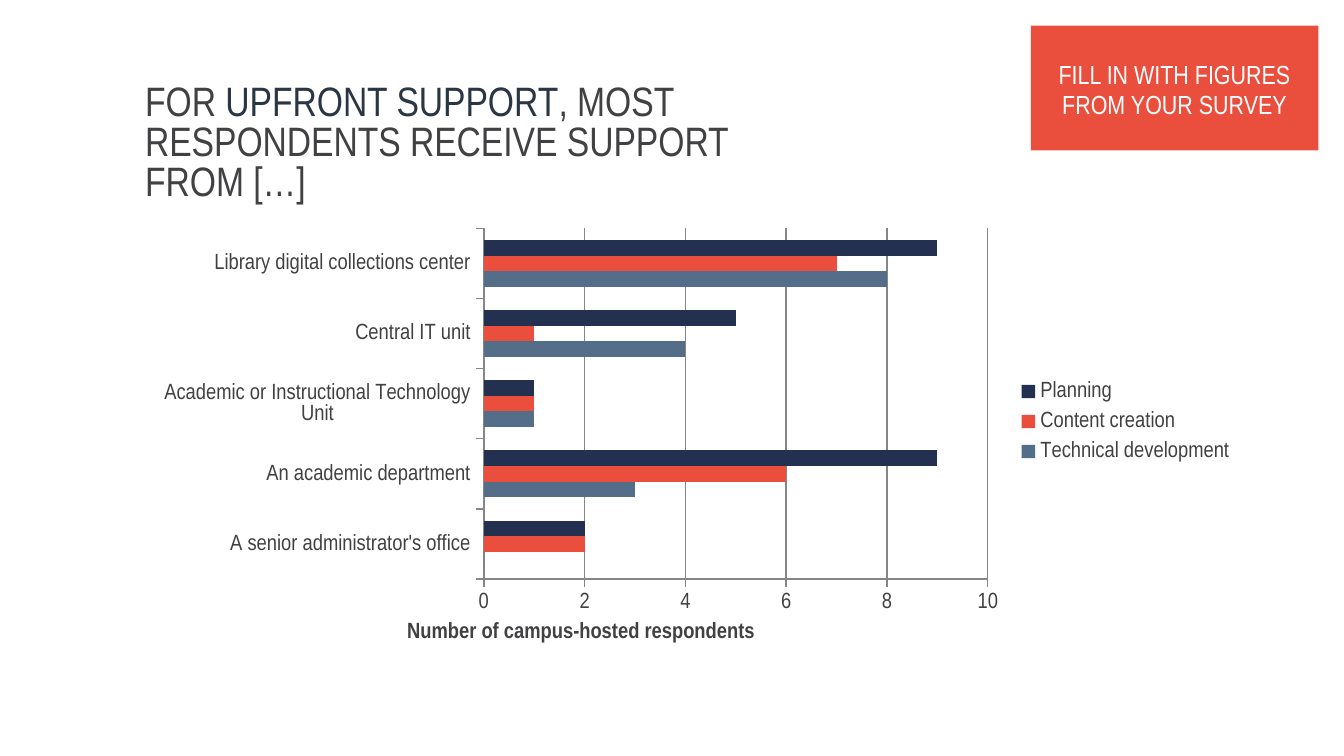
from lxml import etree
from pptx import Presentation
from pptx.chart.data import CategoryChartData
from pptx.dml.color import RGBColor
from pptx.enum.chart import XL_CHART_TYPE as ChartType, XL_LEGEND_POSITION as LegendPosition
from pptx.enum.chart import XL_TICK_MARK as TickMark
from pptx.enum.shapes import MSO_SHAPE as Shape
from pptx.enum.text import MSO_ANCHOR as Anchor, PP_ALIGN as Align
from pptx.oxml.ns import qn
from pptx.util import Inches, Pt

INK = RGBColor(0x41, 0x40, 0x42)
SLATE = RGBColor(0x2A, 0x36, 0x44)
STEEL = RGBColor(0x54, 0x6D, 0x89)
CORAL = RGBColor(0xE9, 0x4F, 0x3C)
NAVY = RGBColor(0x23, 0x30, 0x50)
GRAY = RGBColor(0x86, 0x86, 0x86)
WHITE = RGBColor(0xFF, 0xFF, 0xFF)
FONT = "Arial Narrow"

HEADLINE = [
    ("FOR ", INK),
    ("UPFRONT SUPPORT", SLATE),
    (", MOST RESPONDENTS RECEIVE SUPPORT FROM […]", INK),
]
REMINDER = "FILL IN WITH FIGURES FROM YOUR SURVEY"
AXIS_TITLE = "Number of campus-hosted respondents"
SUPPORT_UNITS = [
    "A senior administrator's office",
    "An academic department",
    "Academic or Instructional Technology Unit",
    "Central IT unit",
    "Library digital collections center",
]
SUPPORT_TYPES = [
    ("Technical development", (0, 3, 1, 4, 8), STEEL),
    ("Content creation", (2, 6, 1, 1, 7), CORAL),
    ("Planning", (2, 9, 1, 5, 9), NAVY),
]
CHART_WIDTH, CHART_HEIGHT = 8.5, 3.25


def style_font(font, size, color=INK, bold=False):
    font.name = FONT
    font.size = Pt(size)
    font.bold = bold
    font.color.rgb = color


def add_text(paragraph, text, size=12, color=INK, bold=False, align=None, spacing=None):
    run = paragraph.add_run()
    run.text = text
    style_font(run.font, size, color, bold)
    paragraph.alignment = align
    paragraph.line_spacing = spacing


def place(parent, index, left, top, width=None, height=None, target=None):
    for old in parent.findall(qn("c:layout")):
        parent.remove(old)
    layout = etree.Element(qn("c:layout"))
    manual = etree.SubElement(layout, qn("c:manualLayout"))
    settings = {
        "layoutTarget": target,
        "xMode": "edge",
        "yMode": "edge",
        "x": left / CHART_WIDTH,
        "y": top / CHART_HEIGHT,
        "w": width and width / CHART_WIDTH,
        "h": height and height / CHART_HEIGHT,
    }
    for tag, value in settings.items():
        if value is not None:
            etree.SubElement(manual, qn(f"c:{tag}")).set("val", str(value))
    parent.insert(index, layout)


def add_headline(slide):
    box = slide.shapes.add_textbox(Inches(0.86), Inches(0.63), Inches(4.93), Inches(0.56))
    frame = box.text_frame
    frame.word_wrap = True
    frame.margin_left = Inches(0.22)
    frame.margin_top = frame.margin_right = frame.margin_bottom = 0
    for text, color in HEADLINE:
        add_text(frame.paragraphs[0], text, size=22, color=color, spacing=0.81)


def add_support_chart(slide):
    data = CategoryChartData()
    data.categories = SUPPORT_UNITS
    for name, values, _ in SUPPORT_TYPES:
        data.add_series(name, values)
    chart = slide.shapes.add_chart(
        ChartType.BAR_CLUSTERED,
        Inches(1.1), Inches(1.58), Inches(CHART_WIDTH), Inches(CHART_HEIGHT),
        data,
    ).chart
    chart.has_title = False
    style_font(chart.font, 12)

    bars = chart.plots[0]
    bars.gap_width = 150
    bars.vary_by_categories = False
    for series, (_, _, color) in zip(bars.series, SUPPORT_TYPES):
        series.format.fill.solid()
        series.format.fill.fore_color.rgb = color

    units, counts = chart.category_axis, chart.value_axis
    for axis in (units, counts):
        axis.major_tick_mark = TickMark.OUTSIDE
        axis.minor_tick_mark = TickMark.NONE
        axis.format.line.color.rgb = GRAY
        style_font(axis.tick_labels.font, 12)
    units.has_major_gridlines = False
    counts.minimum_scale = 0
    counts.maximum_scale = 10
    counts.major_unit = 2
    counts.has_major_gridlines = True
    counts.major_gridlines.format.line.color.rgb = GRAY
    title_frame = counts.axis_title.text_frame
    add_text(title_frame.paragraphs[0], AXIS_TITLE, bold=True)

    chart.has_legend = True
    legend = chart.legend
    legend.position = LegendPosition.RIGHT
    legend.include_in_layout = False
    style_font(legend.font, 12)

    plot_area = bars._element.getparent()
    place(plot_area, 0, 2.5, 0.12, 3.75, 2.64, target="inner")
    place(counts.axis_title._element, 1, 1.9, 3.03)
    place(legend._element, 1, 6.34, 1.2, 1.87, 0.75)


def add_reminder(slide):
    box = slide.shapes.add_shape(
        Shape.RECTANGLE, Inches(7.67), Inches(0.19), Inches(2.14), Inches(0.93)
    )
    box.shadow.inherit = False
    box.fill.solid()
    box.fill.fore_color.rgb = CORAL
    box.line.fill.background()
    frame = box.text_frame
    frame.word_wrap = True
    frame.vertical_anchor = Anchor.MIDDLE
    frame.margin_top = Inches(0.09)
    add_text(frame.paragraphs[0], REMINDER, size=14, color=WHITE, align=Align.CENTER, spacing=0.95)


def main():
    deck = Presentation()
    deck.slide_width = Inches(10)
    deck.slide_height = deck.slide_width * 9 // 16
    slide = deck.slides.add_slide(deck.slide_layouts[6])
    add_headline(slide)
    add_support_chart(slide)
    add_reminder(slide)
    deck.save("out.pptx")


if __name__ == "__main__":
    main()
